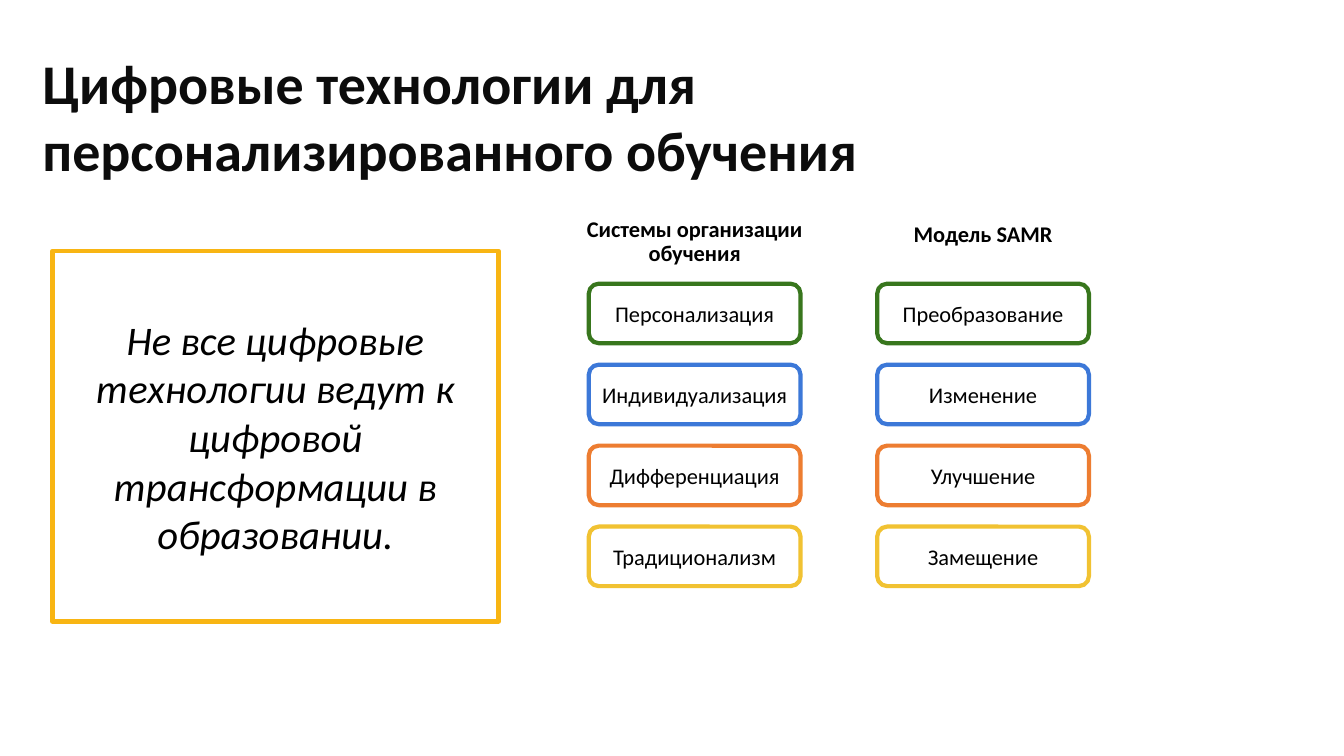
from pptx import Presentation
from pptx.dml.color import RGBColor
from pptx.enum.shapes import MSO_SHAPE
from pptx.enum.text import MSO_ANCHOR, PP_ALIGN
from pptx.util import Inches, Pt

RECT, ROUNDED = MSO_SHAPE.RECTANGLE, MSO_SHAPE.ROUNDED_RECTANGLE
TOP, MIDDLE = MSO_ANCHOR.TOP, MSO_ANCHOR.MIDDLE
LEFT, CENTER = PP_ALIGN.LEFT, PP_ALIGN.CENTER

INK = RGBColor(0x0C, 0x0C, 0x0C)
BLACK = RGBColor(0x00, 0x00, 0x00)
WHITE = RGBColor(0xFF, 0xFF, 0xFF)
AMBER = RGBColor(0xF8, 0xB5, 0x13)
GREEN = RGBColor(0x38, 0x76, 0x1D)
BLUE = RGBColor(0x3C, 0x78, 0xD8)
ORANGE = RGBColor(0xED, 0x7D, 0x31)
YELLOW = RGBColor(0xF1, 0xC2, 0x32)

LEVEL_COLORS = [GREEN, BLUE, ORANGE, YELLOW]
LEVEL_TOP, LEVEL_STEP = 37.53, 10.71
LEVEL_W, LEVEL_H = 15.75, 7.87
CAPTION_W = 18.08
MODELS = [
    (43.81, 27.47, "Системы организации обучения",
     ["Персонализация", "Индивидуализация", "Дифференциация", "Традиционализм"]),
    (65.27, 28.13, "Модель SAMR",
     ["Преобразование", "Изменение", "Улучшение", "Замещение"]),
]


class Deck:
    """Draws styled elements placed in percent of the slide's size."""

    font = "Calibri"

    def __init__(self, prs):
        self.prs = prs
        self.s = prs.slides.add_slide(prs.slide_layouts[6])

    def place(self, x, y, w, h):
        sw, sh = self.prs.slide_width, self.prs.slide_height
        return [int(share * size / 100)
                for share, size in ((x, sw), (y, sh), (w, sw), (h, sh))]

    def set_text(self, sp, text, size, color=BLACK, bold=False, italic=False,
                 align=CENTER, anchor=MIDDLE, inset=0, spacing=1.0):
        tf = sp.text_frame
        tf.word_wrap = True
        tf.vertical_anchor = anchor
        tf.margin_left = tf.margin_right = Inches(inset)
        tf.margin_top = tf.margin_bottom = Inches(inset)
        tf.text = text
        p = tf.paragraphs[0]
        p.alignment = align
        p.line_spacing = spacing
        r = p.runs[0]
        r.font.name, r.font.size = self.font, Pt(size)
        r.font.bold, r.font.italic = bold, italic
        r.font.color.rgb = color

    def label(self, box, text, size, **style):
        sp = self.s.shapes.add_textbox(*self.place(*box))
        self.set_text(sp, text, size, anchor=TOP, **style)

    def frame(self, kind, box, line, text, size, **style):
        sp = self.s.shapes.add_shape(kind, *self.place(*box))
        sp.shadow.inherit = False
        sp.fill.solid()
        sp.fill.fore_color.rgb = WHITE
        sp.line.color.rgb = line
        sp.line.width = Pt(3)
        self.set_text(sp, text, size, **style)

    def model(self, x, caption_top, caption, levels):
        caption_x = x - (CAPTION_W - LEVEL_W) / 2
        self.label((caption_x, caption_top, CAPTION_W, LEVEL_H), caption, 16,
                   bold=True, inset=0.1, spacing=0.9)
        for i, (level, color) in enumerate(zip(levels, LEVEL_COLORS)):
            box = (x, LEVEL_TOP + i * LEVEL_STEP, LEVEL_W, LEVEL_H)
            self.frame(ROUNDED, box, color, level, 16, inset=0.05)


def main():
    prs = Presentation()
    prs.slide_width, prs.slide_height = Inches(13.33), Inches(7.5)
    deck = Deck(prs)
    deck.label((3.15, 6.4, 83.8, 8.27),
               "Цифровые технологии для персонализированного обучения",
               40, color=INK, bold=True, align=LEFT)
    for model in MODELS:
        deck.model(*model)
    deck.frame(RECT, (3.9, 33.2, 33.2, 49), AMBER,
               "Не все цифровые технологии ведут к цифровой "
               "трансформации в образовании.", 29, italic=True)
    prs.save("out.pptx")


if __name__ == "__main__":
    main()
